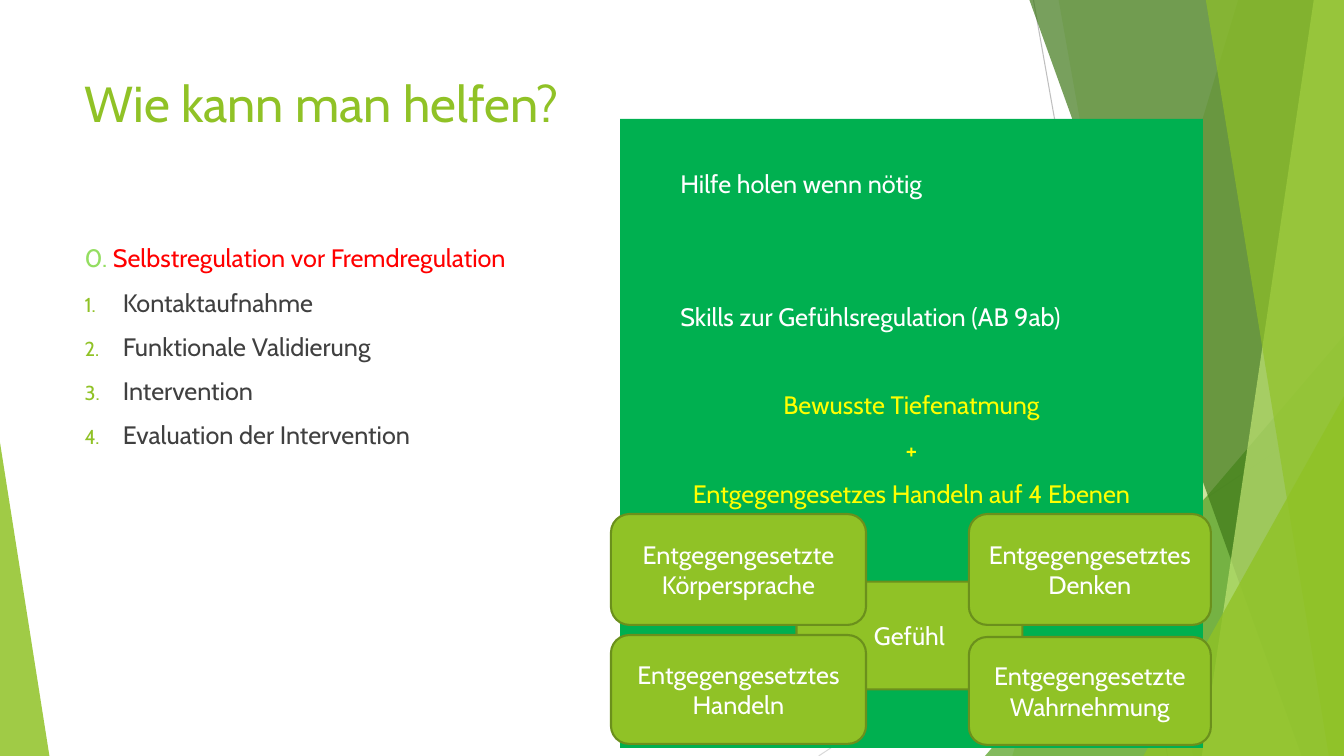
from dataclasses import dataclass

from lxml.etree import SubElement
from pptx import Presentation
from pptx.dml.color import RGBColor
from pptx.enum.shapes import MSO_CONNECTOR, MSO_SHAPE
from pptx.enum.text import MSO_ANCHOR, MSO_AUTO_SIZE, PP_ALIGN
from pptx.oxml.ns import qn
from pptx.util import Pt

PX = 9144  # 100 px to the inch
WIDE, HIGH = 1333, 750
FONT = "Cabin"
LIME, OLIVE, PANEL = "90C226", "6B901C", "00B050"
WHITE, YELLOW, RED, GREY = "FFFFFF", "FFFF00", "FF0000", "404040"


@dataclass
class Box:
    left: int
    top: int
    width: int
    height: int

    def emu(self) -> list[int]:
        return [n * PX for n in (self.left, self.top, self.width, self.height)]


@dataclass
class Ray:
    start: tuple[int, int]
    end: tuple[int, int]
    color: str


@dataclass
class Wedge:
    """Band that runs from its slanted left side to the right slide edge."""
    top: int
    foot: int
    color: str
    alpha: int


@dataclass
class Peak:
    box: Box
    tip: int
    color: str
    alpha: int


@dataclass
class Card:
    box: Box
    text: str


@dataclass
class Line:
    text: str
    color: str
    before: float = 10
    indent: int = 0
    align: PP_ALIGN = PP_ALIGN.LEFT


RAYS = [
    Ray((1025, 0), (1158, HIGH), "BFBFBF"),
    Ray((WIDE, 403), (812, HIGH), "D9D9D9"),
]
FACETS = [
    Wedge(1228, 1004, LIME, 30),
    Wedge(1050, 1183, LIME, 20),
    Peak(Box(977, 333, 356, 417), 1, "54A021", 72),
    Wedge(1021, 1291, "3F7819", 70),
    Wedge(1303, 1192, "C0E474", 70),
    Wedge(1196, 1318, LIME, 65),
    Peak(Box(1134, 393, 199, 357), 1, LIME, 80),
    Peak(Box(0, 439, 49, 311), 0, LIME, 85),
]
STEPS = ["Kontaktaufnahme", "Funktionale Validierung", "Intervention",
         "Evaluation der Intervention"]
MID = PP_ALIGN.CENTER
HELP = [
    Line("Hilfe holen wenn nötig", WHITE, 0, 50),
    Line("Skills zur Gefühlsregulation (AB 9ab)", WHITE, 73.3, 50),
    Line("Bewusste Tiefenatmung", YELLOW, 41.7, align=MID),
    Line("+", YELLOW, align=MID),
    Line("Entgegengesetzes Handeln auf 4 Ebenen", YELLOW, align=MID),
]
CARDS = [
    Card(Box(790, 577, 224, 107), "Gefühl"),
    Card(Box(606, 630, 253, 108), "Entgegengesetztes Handeln"),
    Card(Box(606, 510, 253, 110), "Entgegengesetzte Körpersprache"),
    Card(Box(961, 632, 240, 107), "Entgegengesetzte Wahrnehmung"),
    Card(Box(961, 510, 240, 110), "Entgegengesetztes Denken"),
]


def rgb(color: str) -> RGBColor:
    return RGBColor.from_string(color)


def apply(item, **values) -> None:
    for name, value in values.items():
        setattr(item, name, value)


def paint(shape, color: str, alpha: int = 100, edge: str = "") -> None:
    shape.shadow.inherit = False
    shape.fill.solid()
    shape.fill.fore_color.rgb = rgb(color)
    if alpha < 100:
        tint = shape.fill._xPr.find(qn("a:solidFill"))[0]
        SubElement(tint, qn("a:alpha"), val=str(alpha * 1000))
    if edge:
        shape.line.color.rgb = rgb(edge)
        shape.line.width = Pt(1.5)
    else:
        shape.line.fill.background()


def frame(shape, anchor=MSO_ANCHOR.TOP, **more):
    text = shape.text_frame
    apply(text, word_wrap=True, auto_size=MSO_AUTO_SIZE.NONE,
          vertical_anchor=anchor, **more)
    return text


def write(para, text: str, color: str, size: int = 18) -> None:
    run = para.add_run()
    run.text = text
    apply(run.font, name=FONT, size=Pt(size))
    run.font.color.rgb = rgb(color)


def number(para) -> None:
    props = para._p.get_or_add_pPr()
    props.set("marL", str(38 * PX))
    props.set("indent", str(-38 * PX))
    tint = SubElement(props, qn("a:buClr"))
    SubElement(tint, qn("a:srgbClr"), val=LIME)
    SubElement(props, qn("a:buSzPct"), val="80000")
    SubElement(props, qn("a:buFont"), typeface=FONT)
    SubElement(props, qn("a:buAutoNum"), type="arabicPeriod")


def draw_ray(shapes, ray: Ray) -> None:
    ends = [n * PX for n in (*ray.start, *ray.end)]
    line = shapes.add_connector(MSO_CONNECTOR.STRAIGHT, *ends)
    line.line.color.rgb = rgb(ray.color)
    line.line.width = Pt(0.75)
    SubElement(line._element.spPr, qn("a:effectLst"))


def draw_facet(shapes, facet: Wedge | Peak) -> None:
    if isinstance(facet, Wedge):
        pen = shapes.build_freeform(facet.top, 0, scale=PX)
        pen.add_line_segments([(WIDE, 0), (WIDE, HIGH), (facet.foot, HIGH)])
        shape = pen.convert_to_shape()
    else:
        shape = shapes.add_shape(MSO_SHAPE.ISOSCELES_TRIANGLE, *facet.box.emu())
        shape.adjustments[0] = facet.tip
    paint(shape, facet.color, facet.alpha)


def draw_title(title) -> None:
    place = dict(zip(("left", "top", "width", "height"),
                     Box(74, 67, 940, 144).emu()))
    apply(title, **place)
    para = frame(title).paragraphs[0]
    para.alignment = PP_ALIGN.LEFT
    write(para, "Wie kann man helfen?", LIME, 36)


def draw_steps(shapes) -> None:
    text = frame(shapes.add_textbox(*Box(74, 236, 940, 424).emu()))
    write(text.paragraphs[0], "0. ", "94DE61")
    write(text.paragraphs[0], "Selbstregulation vor Fremdregulation", RED)
    for step in STEPS:
        para = text.add_paragraph()
        para.space_before = Pt(10)
        number(para)
        write(para, step, GREY)


def draw_panel(shapes) -> None:
    panel = shapes.add_shape(MSO_SHAPE.RECTANGLE, *Box(615, 118, 578, 624).emu())
    paint(panel, PANEL)
    text = frame(panel, margin_top=49 * PX)
    for i, line in enumerate(HELP):
        para = text.add_paragraph() if i else text.paragraphs[0]
        apply(para, space_before=Pt(line.before), alignment=line.align)
        para._p.get_or_add_pPr().set("marL", str(line.indent * PX))
        write(para, line.text, line.color)


def draw_card(shapes, card: Card) -> None:
    shape = shapes.add_shape(MSO_SHAPE.ROUNDED_RECTANGLE, *card.box.emu())
    paint(shape, LIME, edge=OLIVE)
    para = frame(shape, MSO_ANCHOR.MIDDLE).paragraphs[0]
    para.alignment = MID
    write(para, card.text, WHITE)


def main() -> None:
    deck = Presentation()
    apply(deck, slide_width=WIDE * PX, slide_height=HIGH * PX)
    slide = deck.slides.add_slide(deck.slide_layouts[5])
    shapes = slide.shapes
    for ray in RAYS:
        draw_ray(shapes, ray)
    for facet in FACETS:
        draw_facet(shapes, facet)
    draw_title(shapes.title)
    draw_steps(shapes)
    draw_panel(shapes)
    for card in CARDS:
        draw_card(shapes, card)
    deck.save("out.pptx")


if __name__ == "__main__":
    main()
